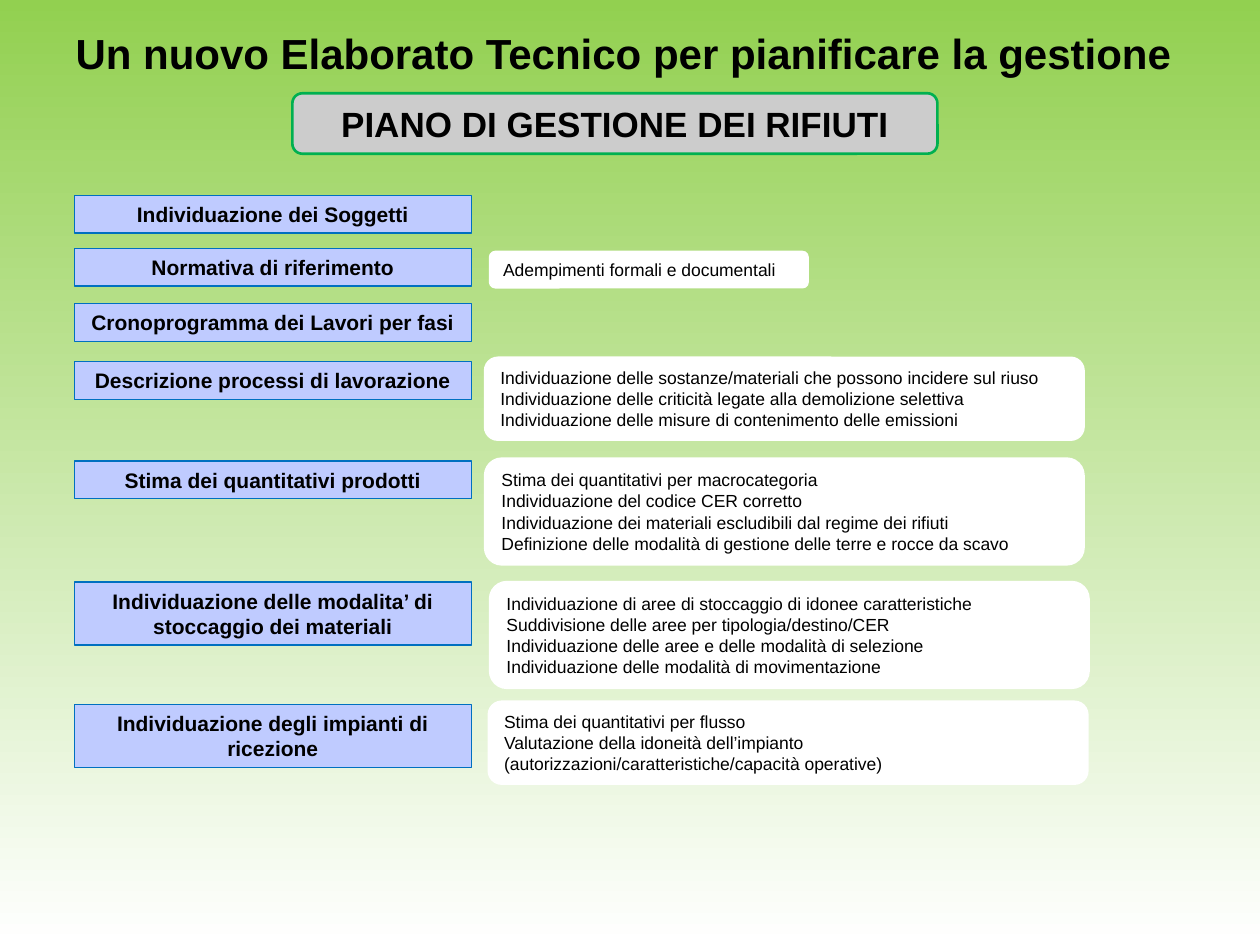
from dataclasses import dataclass

from pptx import Presentation
from pptx.dml.color import RGBColor
from pptx.enum.shapes import MSO_SHAPE
from pptx.enum.text import MSO_ANCHOR, PP_ALIGN
from pptx.shapes.autoshape import Shape
from pptx.slide import Slide
from pptx.util import Inches, Pt

FONT = "Arial"
LABEL_LEFT, LABEL_WIDTH = 0.59, 3.15
DETAIL_WIDTH = 4.77


@dataclass(frozen=True)
class Detail:
    left: float
    top: float
    height: float
    lines: tuple[str, ...]
    width: float = DETAIL_WIDTH


@dataclass(frozen=True)
class Section:
    label: str
    top: float
    height: float = 0.3
    detail: Detail | None = None


SECTIONS = (
    Section("Individuazione dei Soggetti", 1.55),
    Section("Normativa di riferimento", 1.97, detail=Detail(
        3.88, 1.99, 0.3, ("Adempimenti formali e documentali",), width=2.54)),
    Section("Cronoprogramma dei Lavori per fasi", 2.41),
    Section("Descrizione processi di lavorazione", 2.87, detail=Detail(3.84, 2.83, 0.67, (
        "Individuazione delle sostanze/materiali che possono incidere sul riuso",
        "Individuazione delle criticità legate alla demolizione selettiva",
        "Individuazione delle misure di contenimento delle emissioni"))),
    Section("Stima dei quantitativi prodotti", 3.66, detail=Detail(3.84, 3.63, 0.86, (
        "Stima dei quantitativi per macrocategoria",
        "Individuazione del codice CER corretto",
        "Individuazione dei materiali escludibili dal regime dei rifiuti",
        "Definizione delle modalità di gestione delle terre e rocce da scavo"))),
    Section("Individuazione delle modalita’ di stoccaggio dei materiali", 4.62, 0.5,
            Detail(3.88, 4.61, 0.86, (
                "Individuazione di aree di stoccaggio di idonee caratteristiche",
                "Suddivisione delle aree per tipologia/destino/CER",
                "Individuazione delle aree e delle modalità di selezione",
                "Individuazione delle modalità di movimentazione"))),
    Section("Individuazione degli impianti di ricezione", 5.59, 0.5,
            Detail(3.87, 5.56, 0.67, (
                "Stima dei quantitativi per flusso",
                "Valutazione della idoneità dell’impianto "
                "(autorizzazioni/caratteristiche/capacità operative)"))),
)


def color(value: str) -> RGBColor:
    return RGBColor.from_string(value)


def write_text(shape: Shape, lines: tuple[str, ...], size: float,
               bold: bool, alignment: PP_ALIGN) -> None:
    frame = shape.text_frame
    frame.word_wrap = True
    frame.vertical_anchor = MSO_ANCHOR.MIDDLE
    for index, line in enumerate(lines):
        paragraph = frame.add_paragraph() if index else frame.paragraphs[0]
        paragraph.alignment = alignment
        run = paragraph.add_run()
        run.text = line
        run.font.name = FONT
        run.font.size = Pt(size)
        run.font.bold = bold
        run.font.color.rgb = color("000000")


def add_box(slide: Slide, kind: MSO_SHAPE, left: float, top: float, width: float,
            height: float, fill: str, line: str | None = None,
            line_width: float = 0.75) -> Shape:
    shape = slide.shapes.add_shape(
        kind, Inches(left), Inches(top), Inches(width), Inches(height))
    shape.shadow.inherit = False
    shape.fill.solid()
    shape.fill.fore_color.rgb = color(fill)
    if line is None:
        shape.line.fill.background()
    else:
        shape.line.color.rgb = color(line)
        shape.line.width = Pt(line_width)
    return shape


def add_section(slide: Slide, section: Section) -> None:
    label = add_box(slide, MSO_SHAPE.RECTANGLE, LABEL_LEFT, section.top,
                    LABEL_WIDTH, section.height, "BFCBFF", "0070C0")
    write_text(label, (section.label,), 12, True, PP_ALIGN.CENTER)
    detail = section.detail
    if detail:
        box = add_box(slide, MSO_SHAPE.ROUNDED_RECTANGLE, detail.left, detail.top,
                      detail.width, detail.height, "FFFFFF")
        write_text(box, detail.lines, 10, False, PP_ALIGN.LEFT)


def main() -> None:
    presentation = Presentation()
    presentation.slide_width = Inches(10)
    presentation.slide_height = Inches(7.5)
    slide = presentation.slides.add_slide(presentation.slide_layouts[6])

    # Background: green fading down to white
    background = slide.background.fill
    background.gradient()
    background.gradient_angle = 270
    for stop, position, value in zip(background.gradient_stops, (0, 1), ("92D050", "FFFFFF")):
        stop.position = position
        stop.color.rgb = color(value)

    # Title and plan heading
    title = slide.shapes.add_textbox(Inches(0.35), Inches(0.17), Inches(9.29), Inches(0.5))
    write_text(title, ("Un nuovo Elaborato Tecnico per pianificare la gestione ",),
               24, True, PP_ALIGN.CENTER)
    heading = add_box(slide, MSO_SHAPE.ROUNDED_RECTANGLE, 2.32, 0.74, 5.12, 0.48,
                      "CCCCCC", "00B050", 1.5)
    write_text(heading, ("PIANO DI GESTIONE DEI RIFIUTI",), 20, True, PP_ALIGN.CENTER)

    # Plan sections with their details
    for section in SECTIONS:
        add_section(slide, section)

    presentation.save("out.pptx")


if __name__ == "__main__":
    main()
